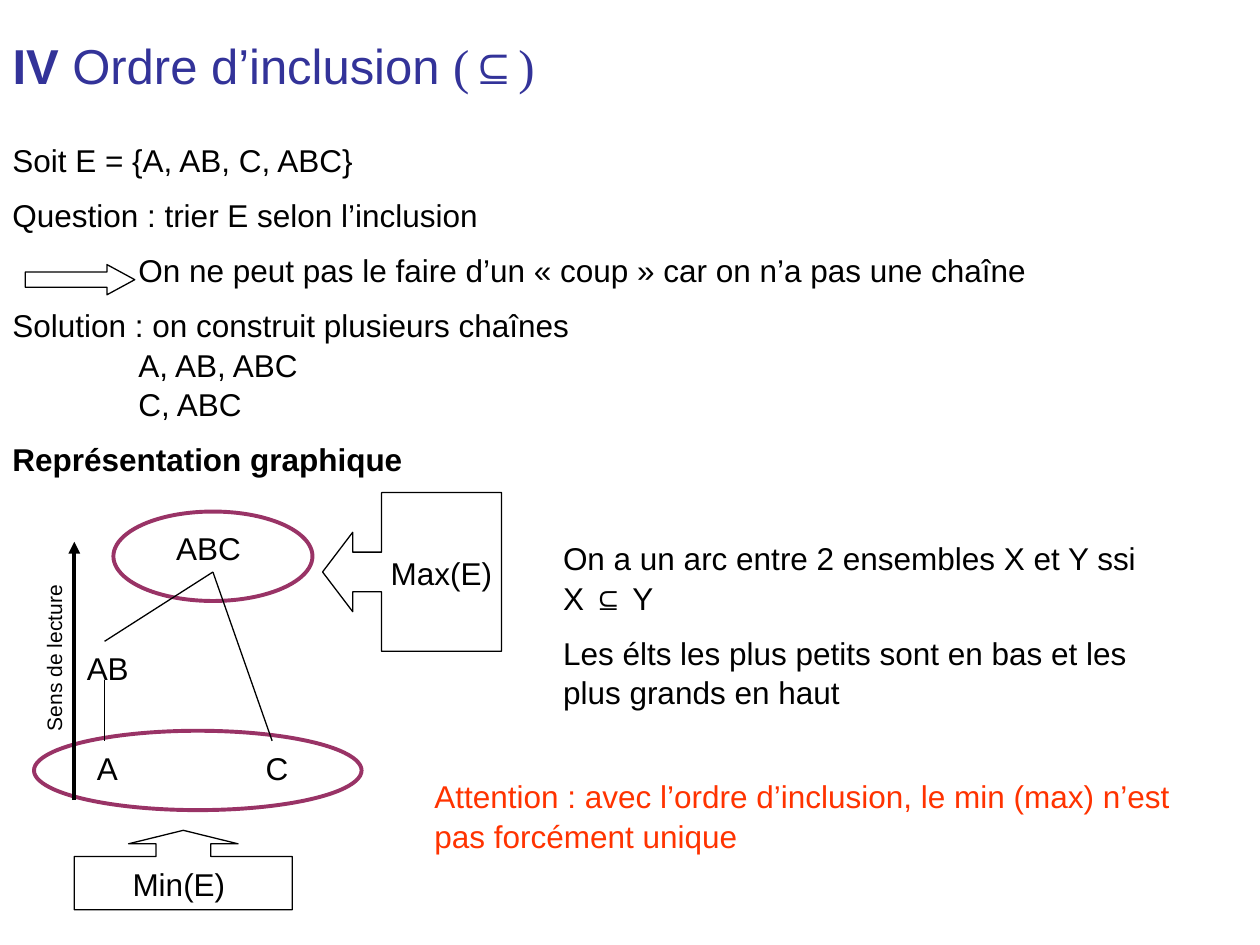
import pptx
import pptx.util
import pptx.dml.color
import pptx.enum.shapes
import pptx.enum.text
import lxml.etree

Inches = pptx.util.Inches
Pt = pptx.util.Pt
RGBColor = pptx.dml.color.RGBColor
KIND = pptx.enum.shapes.MSO_SHAPE
ANCHOR = pptx.enum.text.MSO_ANCHOR
ALIGN = pptx.enum.text.PP_ALIGN
BLACK = RGBColor(0, 0, 0)
BLUE = RGBColor(0x33, 0x33, 0x99)
PLUM = RGBColor(0x99, 0x33, 0x66)
RED = RGBColor(0xFF, 0x33, 0x00)


def write(para, text, size=18, color=BLACK, font="Arial", bold=False):
    para.line_spacing = 1.04
    for num, part in enumerate(text.split("\n")):
        if num:
            para.add_line_break()
        run = para.add_run()
        run.text = part
        run.font.size = Pt(size)
        run.font.name = font
        run.font.bold = bold
        run.font.color.rgb = color


deck = pptx.Presentation()
deck.slide_width = Inches(10)
deck.slide_height = Inches(7.5)
slide = deck.slides.add_slide(deck.slide_layouts[5])
shapes = slide.shapes

title = shapes.title
title.left, title.top = Inches(0), Inches(0.21)
title.width, title.height = Inches(9.06), Inches(0.57)
title.text_frame.vertical_anchor = ANCHOR.TOP
title.text_frame.auto_size = pptx.enum.text.MSO_AUTO_SIZE.NONE
head = title.text_frame.paragraphs[0]
head.alignment = ALIGN.LEFT
write(head, "IV ", size=28, color=BLUE, bold=True)
write(head, "Ordre d’inclusion ", size=28, color=BLUE)
write(head, "(⊆)", size=28, color=BLUE, font="Times New Roman")

texts = [
    (0, 1.06, 8.9, 2.86, 0, {}, [
        "Soit E = {A, AB, C, ABC}",
        "Question : trier E selon l’inclusion",
        "\tOn ne peut pas le faire d’un «\u00a0coup\u00a0» car on n’a pas une chaîne",
        "Solution : on construit plusieurs chaînes\n\tA, AB, ABC\n\tC, ABC",
        "Représentation graphique"]),
    (0.67, 5.88, 0.47, 0.4, 0, {}, ["A"]),
    (2.01, 5.88, 0.47, 0.4, 0, {}, ["C"]),
    (1.3, 4.14, 0.87, 0.4, 0, {}, ["ABC"]),
    (0.59, 5.09, 0.71, 0.4, 0, {}, ["AB"]),
    (4.37, 4.22, 4.88, 1.45, 0, {}, [
        "On a un arc entre 2 ensembles X et Y ssi X ⊆ Y",
        "Les élts les plus petits sont en bas et les plus grands en haut"]),
    (3.35, 6.11, 6.06, 0.7, 0, {"color": RED}, [
        "Attention : avec l’ordre d’inclusion, le min (max) n’est pas forcément unique"]),
    (-0.85, 4.48, 2.54, 0.3, 270, {"size": 12}, ["Sens de lecture"]),
]
for left, top, width, height, turn, style, lines in texts:
    box = shapes.add_textbox(Inches(left), Inches(top), Inches(width), Inches(height))
    box.rotation = turn
    frame = box.text_frame
    frame.word_wrap = True
    for num, line in enumerate(lines):
        para = frame.add_paragraph() if num else frame.paragraphs[0]
        if num:
            para.space_before = Pt(9)
        para._p.get_or_add_pPr().set("defTabSz", str(Inches(1)))
        write(para, line, **style)
        if line == "Représentation graphique":
            para.runs[0].font.bold = True

forms = [
    (KIND.RIGHT_ARROW, 0.2, 2.1, 0.87, 0.24, BLACK, 0.75, [0.5, 0.92], ""),
    (KIND.OVAL, 0.27, 5.8, 2.6, 0.63, PLUM, 2.25, [], ""),
    (KIND.UP_ARROW_CALLOUT, 0.59, 6.59, 1.73, 0.63, BLACK, 0.75,
     [0.69, 0.69, 0.17, 0.67], "Min(E) "),
    (KIND.OVAL, 0.9, 4.06, 1.58, 0.71, PLUM, 2.25, [], ""),
    (KIND.LEFT_ARROW_CALLOUT, 2.56, 3.91, 1.42, 1.26, BLACK, 0.75,
     [0.25, 0.25, 0.19, 0.67], "Max(E)"),
]
for kind, left, top, width, height, color, weight, ratios, text in forms:
    form = shapes.add_shape(kind, Inches(left), Inches(top), Inches(width), Inches(height))
    form.shadow.inherit = False
    form.fill.background()
    form.line.color.rgb = color
    form.line.width = Pt(weight)
    for num, ratio in enumerate(ratios):
        form.adjustments[num] = ratio
    if text:
        frame = form.text_frame
        frame.word_wrap = False
        frame.vertical_anchor = ANCHOR.MIDDLE
        frame.paragraphs[0].alignment = ALIGN.CENTER
        write(frame.paragraphs[0], text)

edges = [
    (0.83, 5.88, 0.83, 5.4, 0.75),
    (0.83, 5.09, 1.69, 4.54, 0.75),
    (1.69, 4.54, 2.16, 5.88, 0.75),
    (0.59, 6.35, 0.59, 4.3, 2.25),
]
space = "{http://schemas.openxmlformats.org/drawingml/2006/main}"
for x1, y1, x2, y2, weight in edges:
    edge = shapes.add_connector(pptx.enum.shapes.MSO_CONNECTOR.STRAIGHT,
                                Inches(x1), Inches(y1), Inches(x2), Inches(y2))
    edge.line.color.rgb = BLACK
    edge.line.width = Pt(weight)
    lxml.etree.SubElement(edge._element.spPr, space + "effectLst")
lxml.etree.SubElement(edge.line._get_or_add_ln(), space + "tailEnd", type="triangle")

deck.save("out.pptx")
